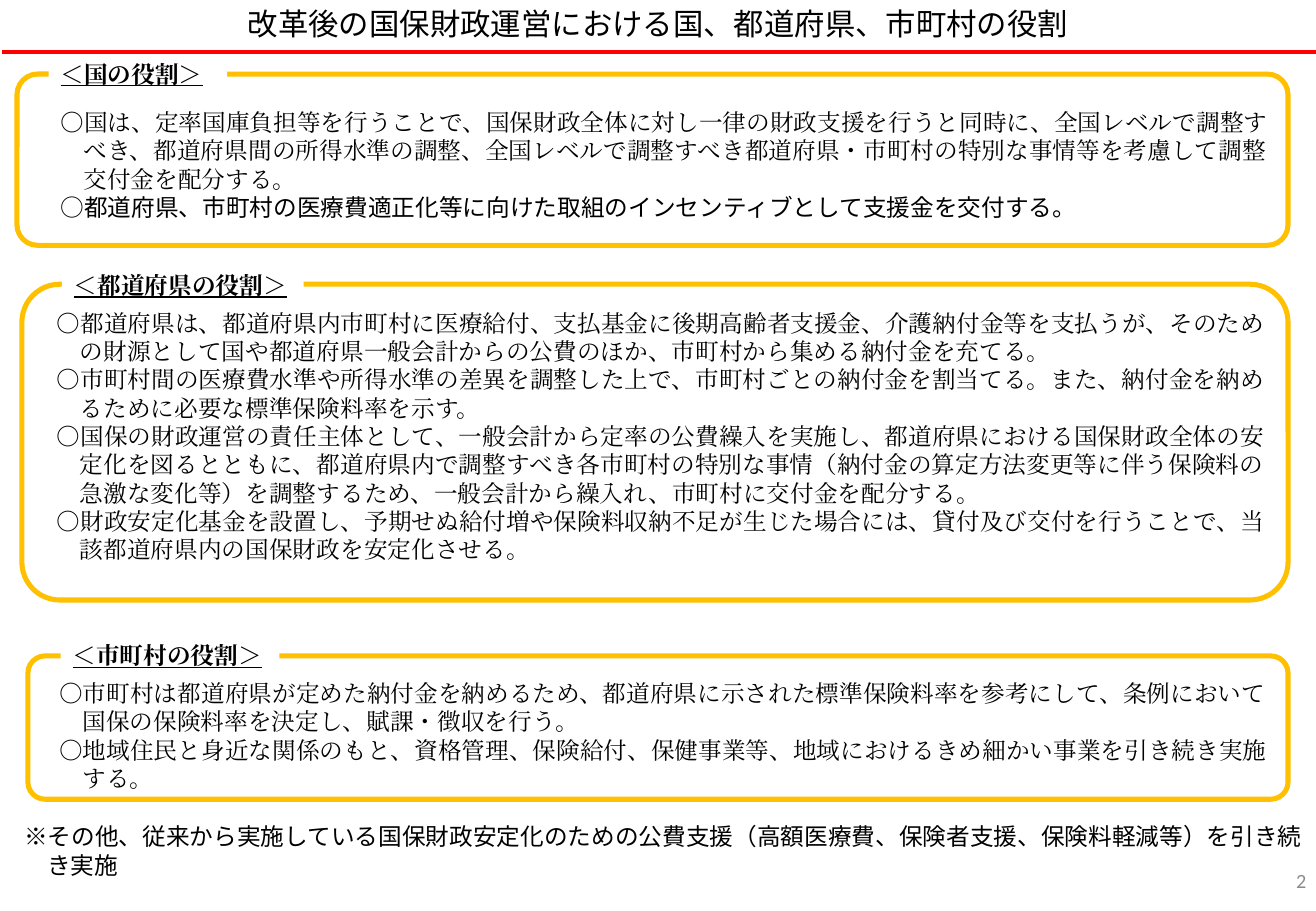
from lxml import etree
from pptx import Presentation
from pptx.dml.color import RGBColor
from pptx.enum.shapes import MSO_CONNECTOR as CONN, MSO_SHAPE as SHAPE
from pptx.enum.text import MSO_ANCHOR as ANCHOR, PP_ALIGN as ALIGN
from pptx.oxml.ns import qn
from pptx.util import Inches, Pt

GOTHIC, SERIF = "Noto Sans CJK JP", "Cambria"
BLACK, WHITE, GREY, RED, GOLD = "000000", "FFFFFF", "8C8C8C", "FF0000", "FFC000"

# heading, heading box, frame box, text box, paragraphs with their fonts
ROLES = [
    ("＜国の役割＞", (0.4, 0.44, 1.47, 0.34), (0.14, 0.61, 10.46, 1.41), (0.4, 0.84, 10.2, 1.04), [
        ("○国は、定率国庫負担等を行うことで、国保財政全体に対し一律の財政支援を行うと同時に、全国レベルで調整すべき、都道府県間の所得水準の調整、全国レベルで調整すべき都道府県・市町村の特別な事情等を考慮して調整交付金を配分する。", SERIF),
        ("○都道府県、市町村の医療費適正化等に向けた取組のインセンティブとして支援金を交付する。", GOTHIC),
    ]),
    ("＜都道府県の役割＞", (0.51, 2.18, 1.99, 0.34), (0.18, 2.34, 10.42, 2.6), (0.37, 2.49, 10.2, 2.22), [
        ("○都道府県は、都道府県内市町村に医療給付、支払基金に後期高齢者支援金、介護納付金等を支払うが、そのための財源として国や都道府県一般会計からの公費のほか、市町村から集める納付金を充てる。", SERIF),
        ("○市町村間の医療費水準や所得水準の差異を調整した上で、市町村ごとの納付金を割当てる。また、納付金を納めるために必要な標準保険料率を示す。", SERIF),
        ("○国保の財政運営の責任主体として、一般会計から定率の公費繰入を実施し、都道府県における国保財政全体の安定化を図るとともに、都道府県内で調整すべき各市町村の特別な事情（納付金の算定方法変更等に伴う保険料の急激な変化等）を調整するため、一般会計から繰入れ、市町村に交付金を配分する。", SERIF),
        ("○財政安定化基金を設置し、予期せぬ給付増や保険料収納不足が生じた場合には、貸付及び交付を行うことで、当該都道府県内の国保財政を安定化させる。", SERIF),
    ]),
    ("＜市町村の役割＞", (0.5, 5.23, 1.8, 0.34), (0.23, 5.4, 10.37, 1.18), (0.39, 5.54, 10.2, 1.04), [
        ("○市町村は都道府県が定めた納付金を納めるため、都道府県に示された標準保険料率を参考にして、条例において国保の保険料率を決定し、賦課・徴収を行う。", SERIF),
        ("○地域住民と身近な関係のもと、資格管理、保険給付、保健事業等、地域におけるきめ細かい事業を引き続き実施する。", SERIF),
    ]),
]
NOTE = "※その他、従来から実施している国保財政安定化のための公費支援（高額医療費、保険者支援、保険料軽減等）を引き続き実施"


def rgb(color):
    return RGBColor.from_string(color)


def inches(box):
    return [Inches(v) for v in box]


def write(p, text, size=14, font=SERIF, color=BLACK, bold=False, underline=False,
          align=ALIGN.LEFT, hanging=0):
    """Fill a paragraph with one formatted run."""
    p.alignment = align
    if hanging:
        pPr = p._p.get_or_add_pPr()
        pPr.set("marL", str(Inches(hanging)))
        pPr.set("indent", str(-Inches(hanging)))
    r = p.add_run()
    r.text = text
    r.font.size, r.font.name = Pt(size), font
    r.font.bold, r.font.underline = bold, underline
    r.font.color.rgb = rgb(color)
    rPr = r._r.get_or_add_rPr()
    rPr.set("lang", "ja-JP")
    etree.SubElement(rPr, qn("a:ea"), typeface=font)


def add_text(s, box, paragraphs, anchor=ANCHOR.TOP, **fmt):
    """Add a text box from (text, font) pairs."""
    tf = s.shapes.add_textbox(*inches(box)).text_frame
    tf.word_wrap, tf.vertical_anchor = True, anchor
    for i, (text, font) in enumerate(paragraphs):
        p = tf.add_paragraph() if i else tf.paragraphs[0]
        write(p, text, font=font, **fmt)


def add_title(s, text):
    sp = s.shapes.title
    sp.left, sp.top, sp.width, sp.height = inches((0, -0.01, 10.83, 0.4))
    sp.text_frame.vertical_anchor = ANCHOR.TOP
    write(sp.text_frame.paragraphs[0], text, size=18, font=GOTHIC, align=ALIGN.CENTER)


def add_frame(s, box):
    sp = s.shapes.add_shape(SHAPE.ROUNDED_RECTANGLE, *inches(box))
    sp.adjustments[0] = 0.12
    sp.shadow.inherit = False
    sp.fill.background()
    sp.line.color.rgb, sp.line.width = rgb(GOLD), Pt(3)


def add_heading(s, box, text):
    """Add a white label that interrupts the frame's top edge."""
    sp = s.shapes.add_shape(SHAPE.RECTANGLE, *inches(box))
    sp.shadow.inherit = False
    sp.fill.solid()
    sp.fill.fore_color.rgb = rgb(WHITE)
    sp.line.fill.background()
    tf = sp.text_frame
    tf.word_wrap, tf.vertical_anchor = True, ANCHOR.TOP
    write(tf.paragraphs[0], text, bold=True, underline=True)


def add_rule(s, x1, x2, y):
    line = s.shapes.add_connector(CONN.STRAIGHT, *inches((x1, y, x2, y)))
    line.line.color.rgb, line.line.width = rgb(RED), Pt(2.5)
    etree.SubElement(line._element.spPr, qn("a:effectLst"))


def main():
    prs = Presentation()
    prs.slide_width, prs.slide_height = Inches(10.83), Inches(7.5)
    s = prs.slides.add_slide(prs.slide_layouts[5])
    add_title(s, "改革後の国保財政運営における国、都道府県、市町村の役割")
    for heading, heading_box, frame_box, text_box, paragraphs in ROLES:
        add_frame(s, frame_box)
        add_heading(s, heading_box, heading)
        add_text(s, text_box, paragraphs, hanging=0.19)
    add_text(s, (0.1, 6.72, 10.74, 0.57), [(NOTE, GOTHIC)], hanging=0.19)
    add_text(s, (8.32, 7.05, 2.53, 0.4), [("2", "Calibri")], anchor=ANCHOR.MIDDLE,
             size=12, color=GREY, align=ALIGN.RIGHT)
    add_rule(s, 0.02, 10.85, 0.43)
    prs.save("out.pptx")


if __name__ == "__main__":
    main()
